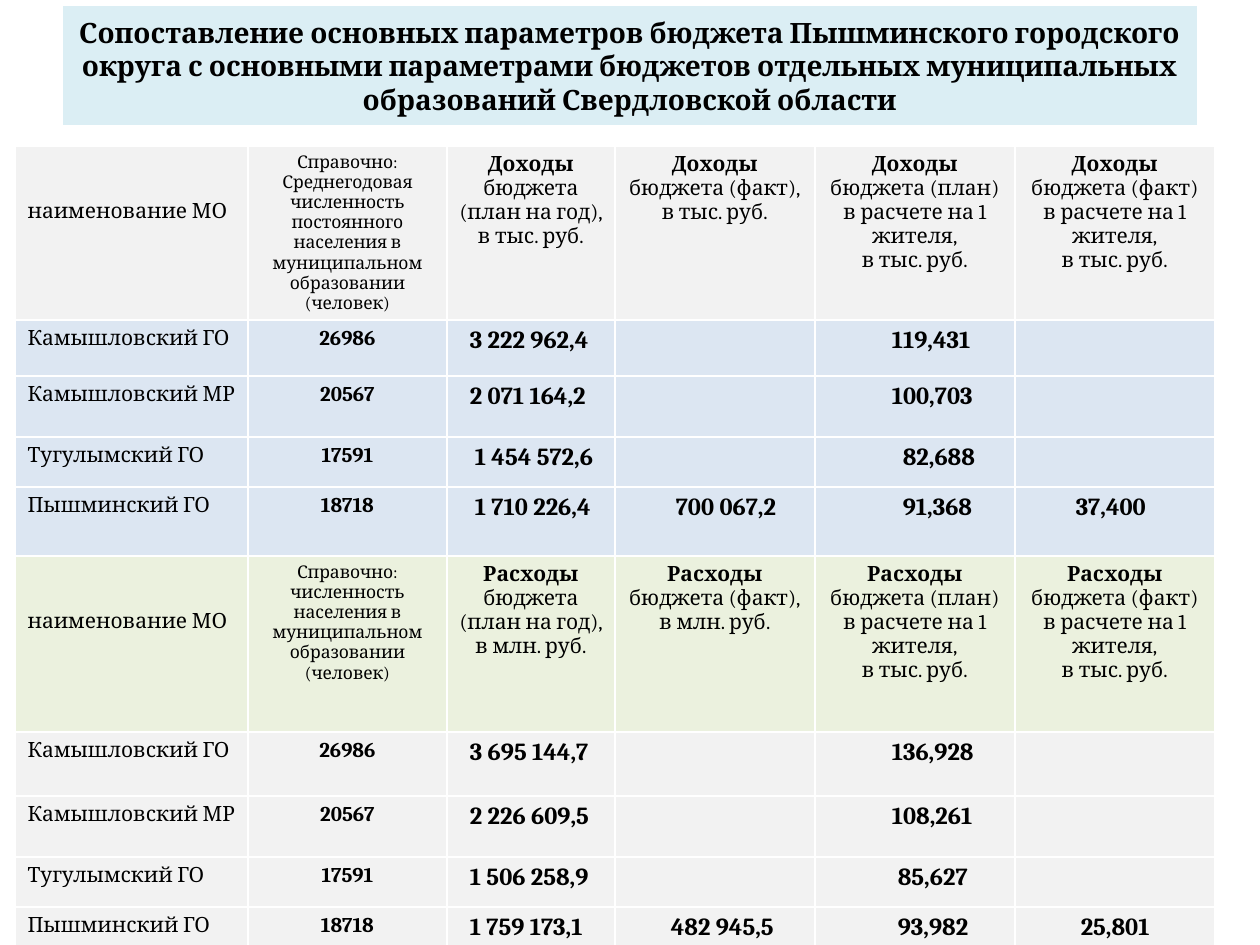
from dataclasses import dataclass

from lxml import etree
from pptx import Presentation
from pptx.dml.color import RGBColor
from pptx.enum.text import MSO_ANCHOR, PP_ALIGN
from pptx.oxml.ns import qn
from pptx.util import Pt

SCALE = 914400 / 126
LEFT, CENTER = PP_ALIGN.LEFT, PP_ALIGN.CENTER
MIDDLE = MSO_ANCHOR.MIDDLE


@dataclass(frozen=True)
class Theme:
    font: str = "Cambria"
    ink: str = "000000"
    line: str = "FFFFFF"
    banner: str = "DBEEF4"
    gray: str = "F2F2F2"
    blue: str = "DCE6F2"
    green: str = "EBF1DE"
    title: int = 16
    value: int = 14
    body: int = 12
    note: int = 10
    border: int = 1


THEME = Theme()
TITLE = ("Сопоставление основных параметров бюджета Пышминского городского "
         "округа с основными параметрами бюджетов отдельных муниципальных "
         "образований Свердловской области")
COLS = [233, 199, 168, 200, 200, 200]
ROWS = [173, 56, 61, 50, 69, 176, 64, 61, 50, 39]
TOWNS = [("Камышловский ГО", "26986"), ("Камышловский МР", "20567"),
         ("Тугулымский ГО", "17591"), ("Пышминский ГО", "18718")]

# Each value goes with its left inset in px; None is an empty cell.
INCOME = [
    [("3 222 962,4", 23), None, ("119,431", 77), None],
    [("2 071 164,2", 23), None, ("100,703", 77), None],
    [("1 454 572,6", 28), None, ("82,688", 88), None],
    [("1 710 226,4", 28), ("700 067,2", 61), ("91,368", 88), ("37,400", 61)],
]
SPENDING = [
    [("3 695 144,7", 23), None, ("136,928", 77), None],
    [("2 226 609,5", 23), None, ("108,261", 77), None],
    [("1 506 258,9", 23), None, ("85,627", 83), None],
    [("1 759 173,1", 23), ("482 945,5", 56), ("93,982", 83), ("25,801", 66)],
]
BLOCKS = [
    ("Доходы", "тыс.", "Среднегодовая численность постоянного населения",
     THEME.gray, THEME.blue, INCOME),
    ("Расходы", "млн.", "численность населения",
     THEME.green, THEME.gray, SPENDING),
]


def px(n):
    return round(n * SCALE)


def apply(obj, **values):
    for name, value in values.items():
        setattr(obj, name, value)


def paint(fill, color):
    fill.solid()
    fill.fore_color.rgb = RGBColor.from_string(color)


def write(frame, lines, size, align=LEFT):
    """Write lines, each a list of (text, bold) runs."""
    for i, line in enumerate(lines):
        para = frame.paragraphs[0] if i == 0 else frame.add_paragraph()
        para.alignment = align
        for text, bold in line:
            run = para.add_run()
            run.text = text
            apply(run.font, name=THEME.font, size=Pt(size), bold=bold)
            run.font.color.rgb = RGBColor.from_string(THEME.ink)


def edge(cell):
    """Draw the four borders of a cell; must come before its fill."""
    props = cell._tc.get_or_add_tcPr()
    for side in ("lnL", "lnR", "lnT", "lnB"):
        line = etree.SubElement(props, qn(f"a:{side}"), w=str(Pt(THEME.border)))
        fill = etree.SubElement(line, qn("a:solidFill"))
        etree.SubElement(fill, qn("a:srgbClr"), val=THEME.line)


def add_title(slide):
    title = slide.shapes.title
    apply(title, left=px(63), top=px(6), width=px(1134), height=px(119))
    paint(title.fill, THEME.banner)
    apply(title.text_frame, word_wrap=True, vertical_anchor=MIDDLE)
    write(title.text_frame, [[(TITLE, True)]], THEME.title, CENTER)


def add_grid(slide):
    frame = slide.shapes.add_table(len(ROWS), len(COLS), px(15), px(146),
                                   px(sum(COLS)), px(sum(ROWS)))
    table = frame.table
    apply(table, first_row=False, horz_banding=False)
    for col, width in zip(table.columns, COLS):
        col.width = px(width)
    for row, height in zip(table.rows, ROWS):
        row.height = px(height)
    return table


def fill_head(cells, kind, unit, people):
    cells[0].margin_top = px(54)
    write(cells[0].text_frame, [[("наименование МО", False)]], THEME.body)
    note = ["Справочно:", f"{people} в муниципальном образовании (человек)"]
    write(cells[1].text_frame, [[(text, False)] for text in note],
          THEME.note, CENTER)
    share = ["в расчете на 1 жителя,", "в тыс. руб."]
    heads = [
        (f" бюджета (план на год), в {unit} руб.", []),
        (" бюджета (факт),", [f"в {unit} руб."]),
        (" бюджета (план)", share),
        (" бюджета (факт)", share),
    ]
    for cell, (first, rest) in zip(cells[2:], heads):
        lines = [[(kind, True), (first, False)]]
        lines += [[(text, False)] for text in rest]
        write(cell.text_frame, lines, THEME.body, CENTER)


def fill_row(cells, town, count, values):
    write(cells[0].text_frame, [[(town, False)]], THEME.body)
    write(cells[1].text_frame, [[(count, True)]], THEME.body, CENTER)
    for cell, value in zip(cells[2:], values):
        if value:
            text, inset = value
            cell.margin_left = px(inset)
            write(cell.text_frame, [[(text, True)]], THEME.value)
        else:
            end = cell.text_frame.paragraphs[0]._p.get_or_add_endParaRPr()
            end.set("sz", str(THEME.body * 100))


def style_row(cells, color):
    for cell in cells:
        edge(cell)
        paint(cell.fill, color)


def fill_block(rows, kind, unit, people, top, base, data):
    head, *body = rows
    style_row(head, top)
    fill_head(head, kind, unit, people)
    for cells, (town, count), values in zip(body, TOWNS, data):
        style_row(cells, base)
        fill_row(cells, town, count, values)


def main():
    deck = Presentation()
    apply(deck, slide_width=px(1260), slide_height=px(945))
    slide = deck.slides.add_slide(deck.slide_layouts[5])
    add_title(slide)
    rows = [list(row.cells) for row in add_grid(slide).rows]
    step = len(TOWNS) + 1
    for i, block in enumerate(BLOCKS):
        fill_block(rows[i * step:(i + 1) * step], *block)
    deck.save("out.pptx")


if __name__ == "__main__":
    main()
